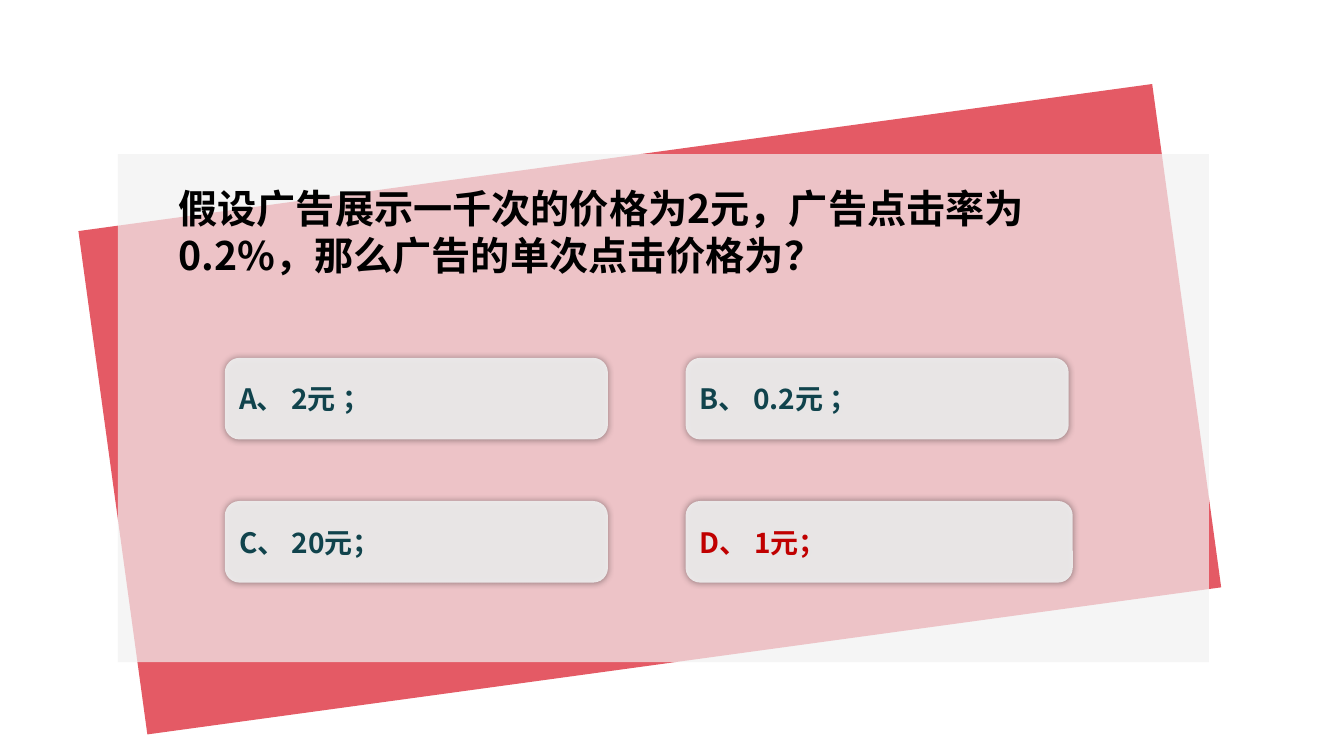
from dataclasses import dataclass

from lxml import etree
from pptx import Presentation, util as u
from pptx.dml.color import RGBColor
from pptx.enum import shapes, text
from pptx.oxml.ns import qn

FONT = "Noto Sans CJK SC"
QUESTION = "假设广告展示一千次的价格为2元，广告点击率为0.2%，那么广告的单次点击价格为？"
BUTTON_HEIGHT = 0.81


@dataclass
class Panel:
    left: float
    top: float
    width: float
    height: float
    color: str
    opacity: int
    rotation: float = 0


@dataclass
class Answer:
    label: str
    column: int
    row: int
    color: str = "10434C"
    width: float = 3.8
    align: text.PP_ALIGN = text.PP_ALIGN.LEFT


PANELS = [
    Panel(1.07, 1.54, 10.75, 5.04, "D91524", 70, 352.2),
    Panel(1.17, 1.53, 10.82, 5.04, "F1F1F1", 70),
]
ANSWERS = [
    Answer("A、 2元 ；", 0, 0),
    Answer("B、 0.2元 ；", 1, 0),
    Answer("C、 20元；", 0, 1),
    Answer("D、 1元；", 1, 1, "C00000", 3.84, text.PP_ALIGN.JUSTIFY),
]


def rgb(color: str) -> RGBColor:
    return RGBColor.from_string(color)


def set_alpha(color_element, opacity: int) -> None:
    etree.SubElement(color_element, qn("a:alpha")).set("val", str(opacity * 1000))


def draw_panel(slide, panel: Panel, kind=shapes.MSO_SHAPE.RECTANGLE):
    box = slide.shapes.add_shape(
        kind, u.Inches(panel.left), u.Inches(panel.top),
        u.Inches(panel.width), u.Inches(panel.height))
    box.rotation = panel.rotation
    box.shadow.inherit = False
    box.fill.solid()
    box.fill.fore_color.rgb = rgb(panel.color)
    set_alpha(box.fill._xPr.find(qn("a:solidFill"))[0], panel.opacity)
    box.line.fill.background()
    return box


def add_glow_shadow(box) -> None:
    effects = box._element.spPr.find(qn("a:effectLst"))
    shadow = etree.SubElement(effects, qn("a:outerShdw"))
    shadow.set("blurRad", str(u.Pt(5)))
    shadow.set("algn", "ctr")
    shadow.set("rotWithShape", "0")
    color = etree.SubElement(shadow, qn("a:srgbClr"))
    color.set("val", "000000")
    set_alpha(color, 40)


def write(box, wording: str, size: int, color: str, align: text.PP_ALIGN,
          anchor: text.MSO_ANCHOR) -> None:
    frame = box.text_frame
    frame.text = wording
    frame.word_wrap = True
    frame.vertical_anchor = anchor
    para = frame.paragraphs[0]
    para.alignment = align
    span = para.runs[0]
    span.font.size = u.Pt(size)
    span.font.bold = True
    span.font.color.rgb = rgb(color)
    span.font.name = FONT
    etree.SubElement(span.font._element, qn("a:ea")).set("typeface", FONT)


def draw_question(slide) -> None:
    title = slide.shapes.title
    title.left, title.top = u.Inches(1.67), u.Inches(1.78)
    title.width, title.height = u.Inches(9.92), u.Inches(1.04)
    write(title, QUESTION, 28, "000000", text.PP_ALIGN.LEFT, text.MSO_ANCHOR.TOP)
    title.text_frame.auto_size = text.MSO_AUTO_SIZE.SHAPE_TO_FIT_TEXT
    slide.shapes._spTree.append(title._element)


def draw_answer(slide, answer: Answer) -> None:
    place = Panel(2.23 + 4.57 * answer.column, 3.55 + 1.42 * answer.row,
                  answer.width, BUTTON_HEIGHT, "F1F1F1", 90)
    box = draw_panel(slide, place, shapes.MSO_SHAPE.ROUNDED_RECTANGLE)
    box.adjustments[0] = 0.18
    add_glow_shadow(box)
    write(box, answer.label, 20, answer.color, answer.align, text.MSO_ANCHOR.MIDDLE)


def main() -> None:
    deck = Presentation()
    deck.slide_width, deck.slide_height = u.Inches(13.33), u.Inches(7.5)
    page = deck.slides.add_slide(deck.slide_layouts[5])
    for panel in PANELS:
        draw_panel(page, panel)
    draw_question(page)
    for answer in ANSWERS:
        draw_answer(page, answer)
    deck.save("out.pptx")


if __name__ == "__main__":
    main()
